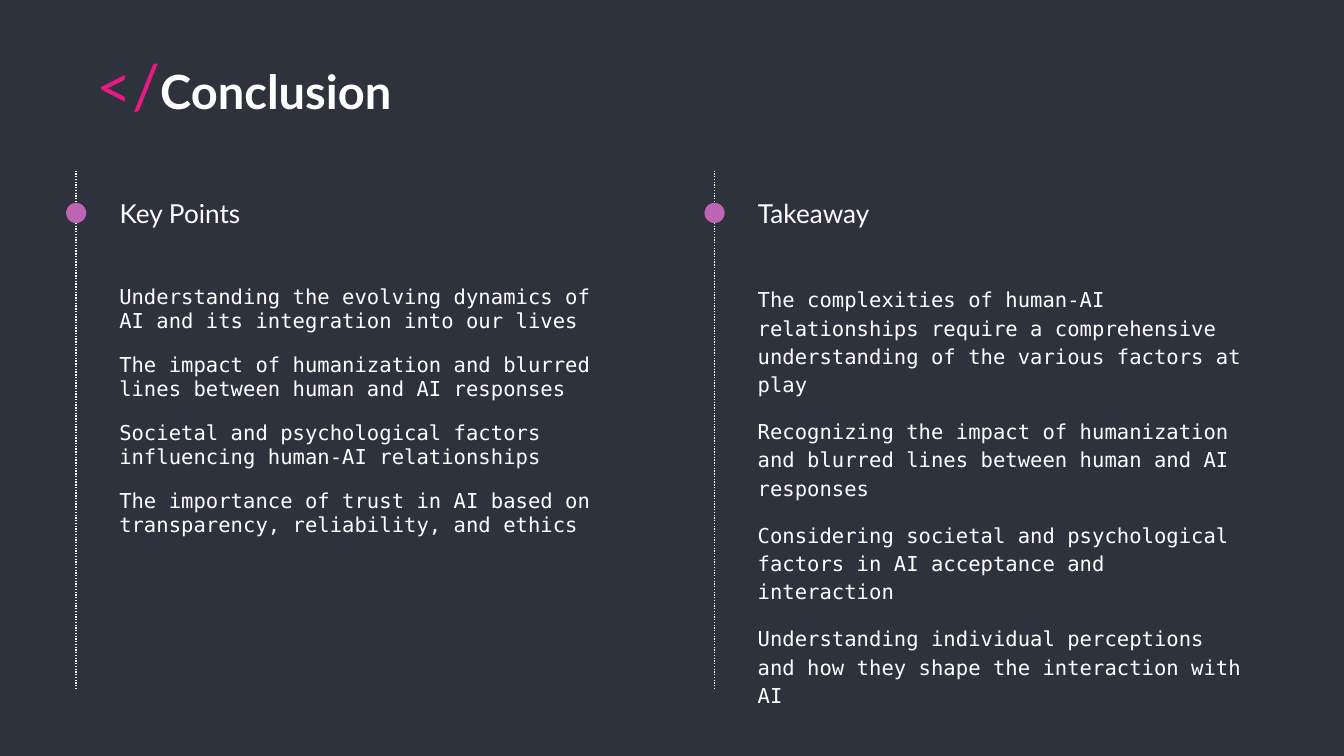
from dataclasses import dataclass

from lxml.etree import SubElement
from pptx import Presentation
from pptx.dml.color import RGBColor
from pptx.enum.dml import MSO_LINE_DASH_STYLE as Dash
from pptx.enum.shapes import MSO_CONNECTOR as Connector
from pptx.enum.shapes import MSO_SHAPE as Shape
from pptx.enum.text import MSO_ANCHOR as Anchor
from pptx.enum.text import MSO_AUTO_SIZE as AutoSize
from pptx.enum.text import PP_ALIGN as Align
from pptx.oxml.ns import qn
from pptx.util import Pt


@dataclass(frozen=True)
class Theme:
    background: RGBColor = RGBColor(0x2D, 0x32, 0x3C)
    text: RGBColor = RGBColor(0xFF, 0xFF, 0xFF)
    accent: RGBColor = RGBColor(0xE8, 0x19, 0x81)
    dot: RGBColor = RGBColor(0xBD, 0x64, 0xB5)
    heading_font: str = "Lato"
    body_font: str = "DejaVu Sans Mono"
    bracket_size: float = 33
    title_size: float = 25.2
    heading_size: float = 14
    body_size: float = 11


THEME = Theme()
INSET = 7.2
PARAGRAPH_GAP = 10
TEXT_INDENT = 27.4
COLUMN_STEP = 342
LINE_X = 40.8
LINE_TOP, LINE_BOTTOM = 91.4, 369.4
DOT_SIZE = 10.8
DOT_TOP = 108.7

COLUMNS = [
    ("Key Points", 1.0, [
        "Understanding the evolving dynamics of AI and its integration into our lives",
        "The impact of humanization and blurred lines between human and AI responses",
        "Societal and psychological factors influencing human-AI relationships",
        "The importance of trust in AI based on transparency, reliability, and ethics",
    ]),
    ("Takeaway", 1.15, [
        "The complexities of human-AI relationships require a comprehensive "
        "understanding of the various factors at play",
        "Recognizing the impact of humanization and blurred lines between human "
        "and AI responses",
        "Considering societal and psychological factors in AI acceptance and interaction",
        "Understanding individual perceptions and how they shape the interaction with AI",
    ]),
]


def place(shape, left, top, width, height):
    shape.left, shape.top = Pt(left), Pt(top)
    shape.width, shape.height = Pt(width), Pt(height)


def format_frame(frame, anchor):
    frame.word_wrap = True
    frame.auto_size = AutoSize.NONE
    frame.vertical_anchor = anchor
    frame.margin_left = frame.margin_right = Pt(INSET)
    frame.margin_top = frame.margin_bottom = Pt(INSET)


def add_run(paragraph, text, font_name, size, color, bold=False):
    run = paragraph.add_run()
    run.text = text
    run.font.name = font_name
    run.font.size = Pt(size)
    run.font.color.rgb = color
    run.font.bold = bold


def fill_title(title):
    place(title, 44.6, 18.7, 607, 45.4)
    format_frame(title.text_frame, Anchor.TOP)
    paragraph = title.text_frame.paragraphs[0]
    paragraph.alignment = Align.LEFT
    add_run(paragraph, "</", THEME.heading_font, THEME.bracket_size, THEME.accent)
    add_run(paragraph, "Conclusion", THEME.heading_font, THEME.title_size, THEME.text, True)


def add_text_frame(slide, left, top, width, height, anchor):
    frame = slide.shapes.add_textbox(Pt(left), Pt(top), Pt(width), Pt(height)).text_frame
    format_frame(frame, anchor)
    return frame


def add_heading(slide, offset, text):
    frame = add_text_frame(slide, 57 + offset, LINE_TOP, 273.6, 45.4, Anchor.MIDDLE)
    add_run(frame.paragraphs[0], text, THEME.heading_font, THEME.heading_size, THEME.text)


def add_points(slide, offset, points, line_spacing):
    frame = add_text_frame(slide, 29.4 + offset, 144.7, 301, 215.3, Anchor.TOP)
    for index, point in enumerate(points):
        paragraph = frame.add_paragraph() if index else frame.paragraphs[0]
        paragraph.line_spacing = line_spacing
        if index:
            paragraph.space_before = Pt(PARAGRAPH_GAP)
        paragraph._p.get_or_add_pPr().set("marL", str(Pt(TEXT_INDENT)))
        add_run(paragraph, point, THEME.body_font, THEME.body_size, THEME.text)


def add_dotted_line(slide, x):
    line = slide.shapes.add_connector(
        Connector.STRAIGHT, Pt(x), Pt(LINE_TOP), Pt(x), Pt(LINE_BOTTOM))
    line.line.color.rgb = THEME.text
    line.line.width = Pt(0.75)
    line.line.dash_style = Dash.ROUND_DOT
    SubElement(line._element.spPr, qn("a:effectLst"))


def add_dot(slide, x):
    dot = slide.shapes.add_shape(
        Shape.OVAL, Pt(x - DOT_SIZE / 2), Pt(DOT_TOP), Pt(DOT_SIZE), Pt(DOT_SIZE))
    dot.shadow.inherit = False
    dot.fill.solid()
    dot.fill.fore_color.rgb = THEME.dot
    dot.line.fill.background()


def main():
    presentation = Presentation()
    presentation.slide_width, presentation.slide_height = Pt(720), Pt(405)
    slide = presentation.slides.add_slide(presentation.slide_layouts.get_by_name("Title Only"))
    slide.background.fill.solid()
    slide.background.fill.fore_color.rgb = THEME.background
    fill_title(slide.shapes.title)
    for index, (heading, line_spacing, points) in enumerate(COLUMNS):
        offset = index * COLUMN_STEP
        add_points(slide, offset, points, line_spacing)
        add_heading(slide, offset, heading)
        add_dotted_line(slide, LINE_X + offset)
        add_dot(slide, LINE_X + offset)
    presentation.save("out.pptx")


if __name__ == "__main__":
    main()
